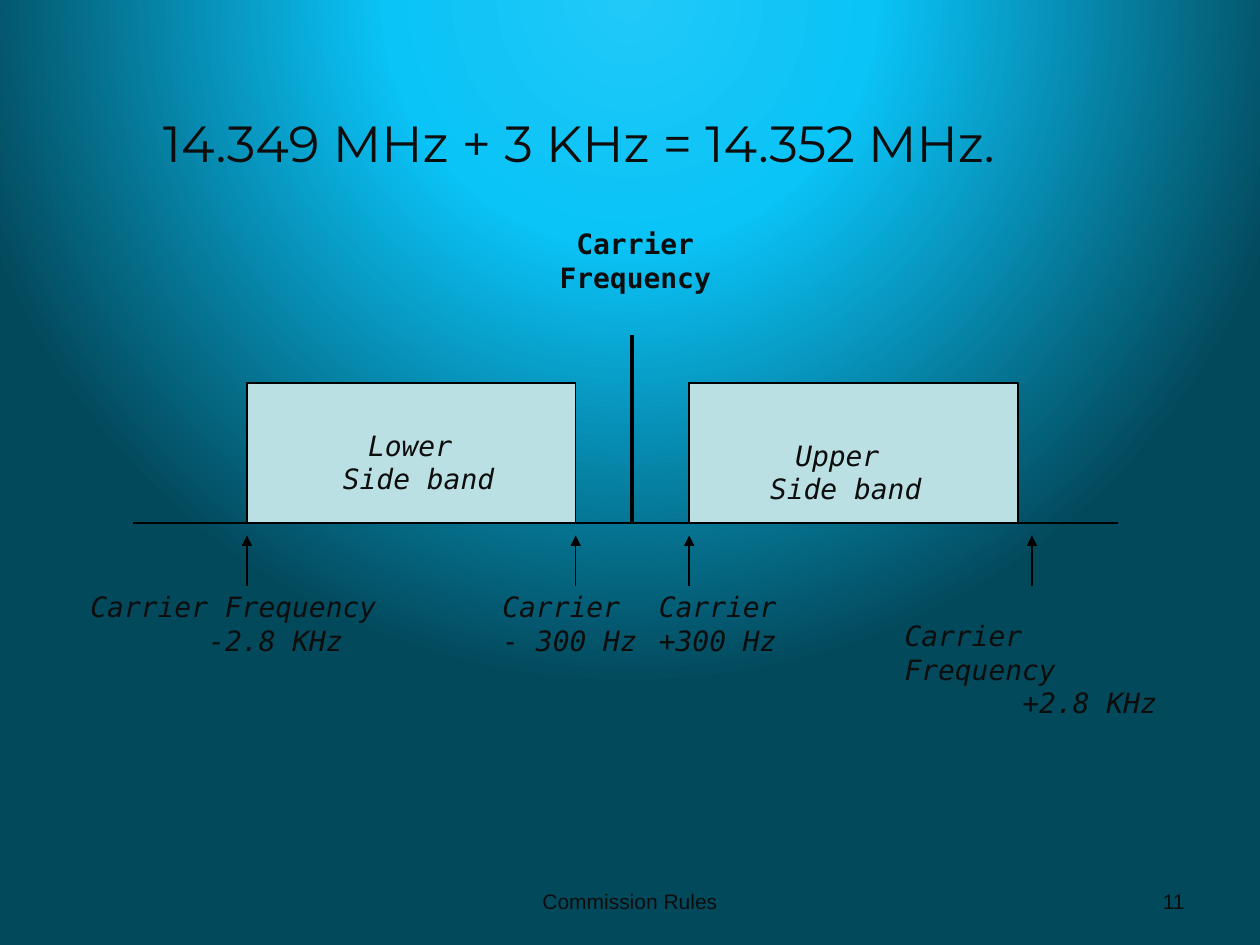
from lxml import etree
from pptx import Presentation
from pptx import util as u
from pptx.dml.color import RGBColor
from pptx.enum import shapes, text
from pptx.oxml import parse_xml
from pptx.oxml.ns import nsdecls, qn

Pt = u.Pt
color = RGBColor.from_string
INK, BLACK, BAND = "0D0D0D", "000000", "BBE0E3"
MONO = "DejaVu Sans Mono"
LEFT, CENTER, RIGHT = text.PP_ALIGN.LEFT, text.PP_ALIGN.CENTER, text.PP_ALIGN.RIGHT
TOP, MIDDLE = text.MSO_ANCHOR.TOP, text.MSO_ANCHOR.MIDDLE


def add_label(box, lines, align=LEFT, size=16, font=MONO, bold=False,
              italic=True, anchor=TOP, last_indent=0):
    shape = slide.shapes.add_textbox(*map(Pt, box))
    frame = shape.text_frame
    frame.word_wrap = True
    frame.vertical_anchor = anchor
    frame.text = "\n".join(lines)
    for paragraph in frame.paragraphs:
        paragraph.alignment = align
        paragraph.font.name, paragraph.font.size = font, Pt(size)
        paragraph.font.bold, paragraph.font.italic = bold, italic
        paragraph.font.color.rgb = color(INK)
    if last_indent:
        properties = frame.paragraphs[-1]._p.get_or_add_pPr()
        properties.set("marL", str(Pt(last_indent)))
        properties.set("indent", "0")


def add_line(x1, y1, x2, y2, width=0.75, arrow=False):
    line = slide.shapes.add_connector(
        shapes.MSO_CONNECTOR.STRAIGHT, Pt(x1), Pt(y1), Pt(x2), Pt(y2))
    line.line.color.rgb = color(BLACK)
    line.line.width = Pt(width)
    if arrow:
        etree.SubElement(line.line._get_or_add_ln(), qn("a:tailEnd"), type="triangle")
    etree.SubElement(line._element.spPr, qn("a:effectLst"))


presentation = Presentation()
presentation.slide_width, presentation.slide_height = Pt(720), Pt(540)
slide = presentation.slides.add_slide(presentation.slide_layouts[5])

# Background: glow from above the top edge
stops = "".join(
    f'<a:gs pos="{position}000"><a:srgbClr val="{value}"/></a:gs>'
    for position, value in ((0, "20C9F8"), (31, "0AC3F7"), (87, "03495C")))
slide.element.cSld.insert(0, parse_xml(
    f'<p:bg {nsdecls("p", "a")}><p:bgPr><a:gradFill rotWithShape="1">'
    f'<a:gsLst>{stops}</a:gsLst><a:path path="circle">'
    '<a:fillToRect l="50000" t="-80000" r="50000" b="180000"/></a:path>'
    '</a:gradFill><a:effectLst/></p:bgPr></p:bg>'))

# Title
title = slide.shapes.title
title.left, title.top, title.width, title.height = map(Pt, (46, 60, 570, 48))
title.text_frame.text = "14.349 MHz + 3 KHz = 14.352 MHz."
title.text_frame.vertical_anchor = TOP
paragraph = title.text_frame.paragraphs[0]
paragraph.alignment = CENTER
paragraph.font.name, paragraph.font.size = "Montserrat", Pt(29)
paragraph.font.color.rgb = color(INK)

# Footer and slide number
footer = dict(size=12, font="Arial", italic=False, anchor=MIDDLE)
add_label((516, 500.4, 168, 28.8), ["11"], RIGHT, **footer)
add_label((246, 500.4, 228, 28.8), ["Commission Rules"], CENTER, **footer)

# Frequency axis and carrier
AXIS = 298.8
add_line(76.3, AXIS, 638.6, AXIS)
add_line(361.4, AXIS, 361.4, 191.5, width=2.25)
add_label((298, 126, 130, 55), ["Carrier Frequency"], CENTER, bold=True, italic=False)

# Side bands
for x in (141.1, 393.8):
    band = slide.shapes.add_shape(
        shapes.MSO_SHAPE.RECTANGLE, Pt(x), Pt(AXIS - 80), Pt(188), Pt(80))
    band.shadow.inherit = False
    band.fill.solid()
    band.fill.fore_color.rgb = color(BAND)
    band.line.color.rgb = color(BLACK)
    band.line.width = Pt(0.75)
for x, y, name in ((174.2, 241.2, "Lower "), (418.3, 247, "Upper ")):
    add_label((x, y, 130, 55), [name, "Side band"], CENTER)

# Band edges: arrows and their labels
for x in (141.1, 329, 393.8, 589.7):
    add_line(x, 334.8, x, 306, arrow=True)
for x, y, width, lines, indent in (
        (44.6, 333.4, 190, ["Carrier Frequency", "-2.8 KHz"], 67.4),
        (280, 333.4, 98, ["Carrier", "- 300 Hz"], 0),
        (369.4, 333.4, 98, ["Carrier", "+300 Hz"], 0),
        (509.8, 350, 169, ["Carrier Frequency", "+2.8 KHz"], 67.4)):
    add_label((x, y, width, 55), lines, last_indent=indent)

presentation.save("out.pptx")
